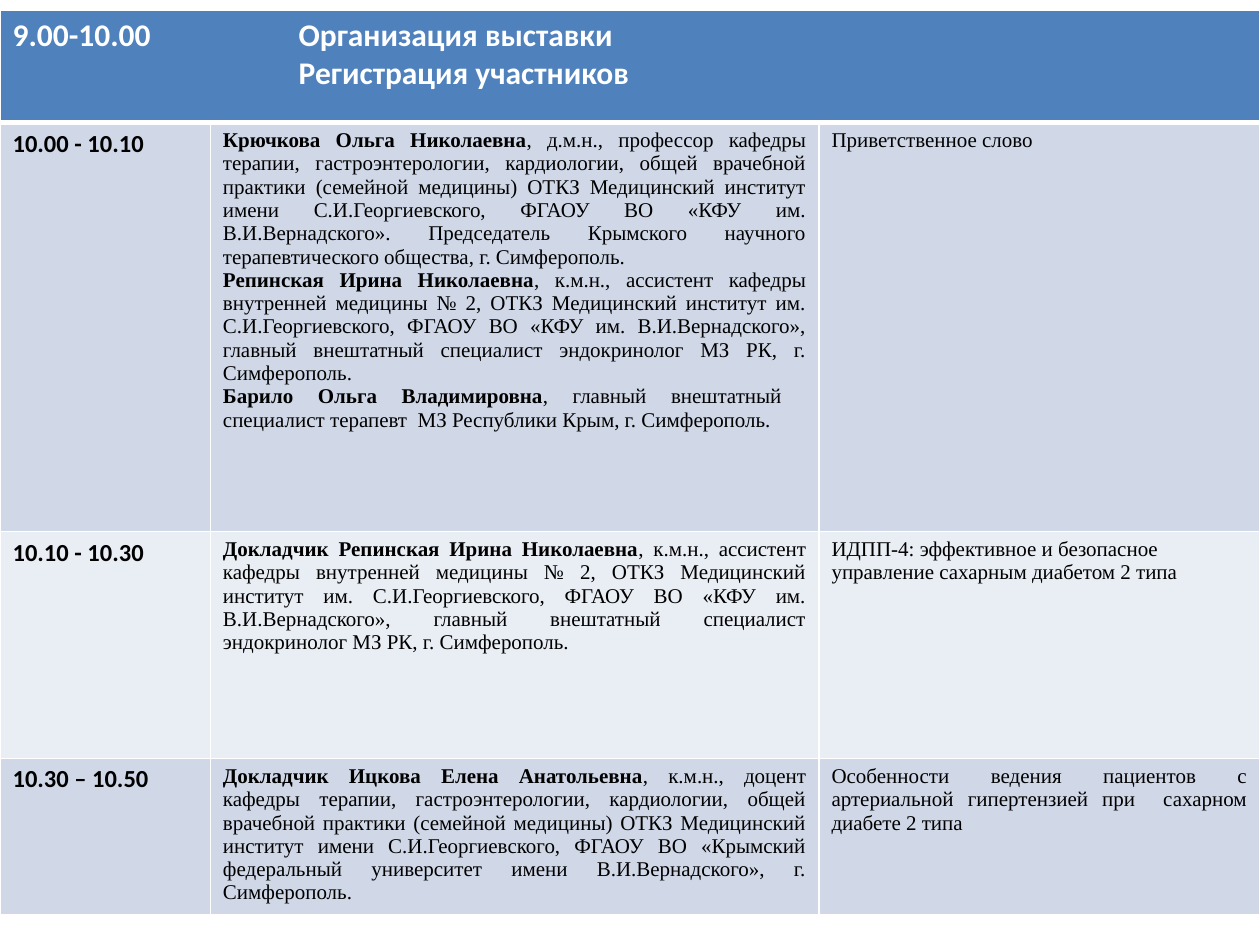
from pptx import Presentation
from pptx.dml.color import RGBColor
from pptx.enum.text import PP_ALIGN
from pptx.oxml.ns import qn
from pptx.util import Inches, Pt
from lxml.etree import SubElement

WIDE, HIGH = 10, 7.5
TOP = 0.08
COLS = [0.167, 0.483, 0.35]  # shares of the slide width
ROWS = [0.119, 0.433, 0.24, 0.165]  # shares of the slide height
TAB = 2.27
HUES = {"head": "4F81BD", "odd": "D0D8E8", "even": "E9EDF4",
        "line": "FFFFFF", "light": "FFFFFF", "dark": "000000"}
SANS, SERIF = "Calibri", "Times New Roman"
FULL, LEFT = PP_ALIGN.JUSTIFY, PP_ALIGN.LEFT

HEAD = ["9.00-10.00\tОрганизация выставки", "\tРегистрация участников"]
REPIN = (", к.м.н., ассистент кафедры внутренней медицины № 2, ОТКЗ Медицинский "
         "институт им. С.И.Георгиевского, ФГАОУ ВО «КФУ им. В.И.Вернадского», "
         "главный внештатный специалист эндокринолог МЗ РК, г. Симферополь.")

# Each talk: time, speakers (name, post), topic, topic alignment
TALKS = [
    ("10.00 - 10.10", [
        ("Крючкова Ольга Николаевна",
         ", д.м.н., профессор кафедры терапии, гастроэнтерологии, кардиологии, "
         "общей врачебной практики (семейной медицины) ОТКЗ Медицинский институт "
         "имени С.И.Георгиевского, ФГАОУ ВО «КФУ им. В.И.Вернадского». "
         "Председатель Крымского научного терапевтического общества, "
         "г. Симферополь."),
        ("Репинская Ирина Николаевна", REPIN),
        ("Барило Ольга Владимировна",
         ", главный внештатный  специалист терапевт  МЗ Республики Крым, "
         "г. Симферополь."),
    ], "Приветственное слово", FULL),
    ("10.10 - 10.30", [("Докладчик Репинская Ирина Николаевна", REPIN)],
     "ИДПП-4: эффективное и безопасное управление сахарным диабетом 2 типа", LEFT),
    ("10.30 – 10.50", [
        ("Докладчик Ицкова Елена Анатольевна",
         ", к.м.н., доцент кафедры терапии, гастроэнтерологии, кардиологии, общей "
         "врачебной практики (семейной медицины) ОТКЗ Медицинский институт имени "
         "С.И.Георгиевского, ФГАОУ ВО «Крымский федеральный университет имени "
         "В.И.Вернадского», г. Симферополь."),
    ], "Особенности ведения пациентов с артериальной гипертензией при  сахарном "
       "диабете 2 типа", FULL),
]


def color(name):
    return RGBColor.from_string(HUES[name])


def paint(cell, hue, above=1, below=1):
    """Draw the cell's borders, then its fill."""
    props = cell._tc.get_or_add_tcPr()
    for side, width in zip("LRTB", (1, 1, above, below)):
        line = SubElement(props, qn("a:ln" + side), w=str(Pt(width)))
        fill = SubElement(line, qn("a:solidFill"))
        SubElement(fill, qn("a:srgbClr"), val=HUES["line"])
    cell.fill.solid()
    cell.fill.fore_color.rgb = color(hue)


def write(cell, paras, size, face, align=LEFT, hue="dark"):
    """Fill a cell; every paragraph is a list of (text, bold) runs."""
    frame = cell.text_frame
    for i, parts in enumerate(paras):
        para = frame.add_paragraph() if i else frame.paragraphs[0]
        para.alignment = align
        for text, bold in parts:
            run = para.add_run()
            run.text = text
            font = run.font
            font.size, font.name, font.bold = Pt(size), face, bold
            font.color.rgb = color(hue)


def set_tab(para):
    stops = SubElement(para._p.get_or_add_pPr(), qn("a:tabLst"))
    SubElement(stops, qn("a:tab"), pos=str(Inches(TAB)), algn="l")


def add_grid(slide):
    shape = slide.shapes.add_table(
        len(ROWS), len(COLS), 0, Inches(TOP), Inches(WIDE), Inches(HIGH * sum(ROWS)))
    grid = shape.table
    for col, share in zip(grid.columns, COLS):
        col.width = Inches(WIDE * share)
    for row, share in zip(grid.rows, ROWS):
        row.height = Inches(HIGH * share)
    return grid


def fill_head(grid):
    for cell in grid.rows[0].cells:
        paint(cell, "head", below=3)
    first = grid.cell(0, 0)
    first.merge(grid.cell(0, len(COLS) - 1))
    write(first, [[(text, True)] for text in HEAD], 18, SANS, hue="light")
    for para in first.text_frame.paragraphs:
        set_tab(para)


def fill_talk(grid, row, talk):
    time, people, topic, align = talk
    cells = list(grid.rows[row].cells)
    for cell in cells:
        paint(cell, "odd" if row % 2 else "even", above=3 if row == 1 else 1)
    write(cells[0], [[(time, True)]], 14, SANS)
    write(cells[1], [[(name, True), (post, False)] for name, post in people],
          12, SERIF, FULL)
    write(cells[2], [[(topic, False)]], 12, SERIF, align)


def main():
    deck = Presentation()
    deck.slide_width, deck.slide_height = Inches(WIDE), Inches(HIGH)
    slide = deck.slides.add_slide(deck.slide_layouts[6])

    # Programme table: merged heading, then one row per talk
    grid = add_grid(slide)
    fill_head(grid)
    for row, talk in enumerate(TALKS, 1):
        fill_talk(grid, row, talk)

    deck.save("out.pptx")


if __name__ == "__main__":
    main()
